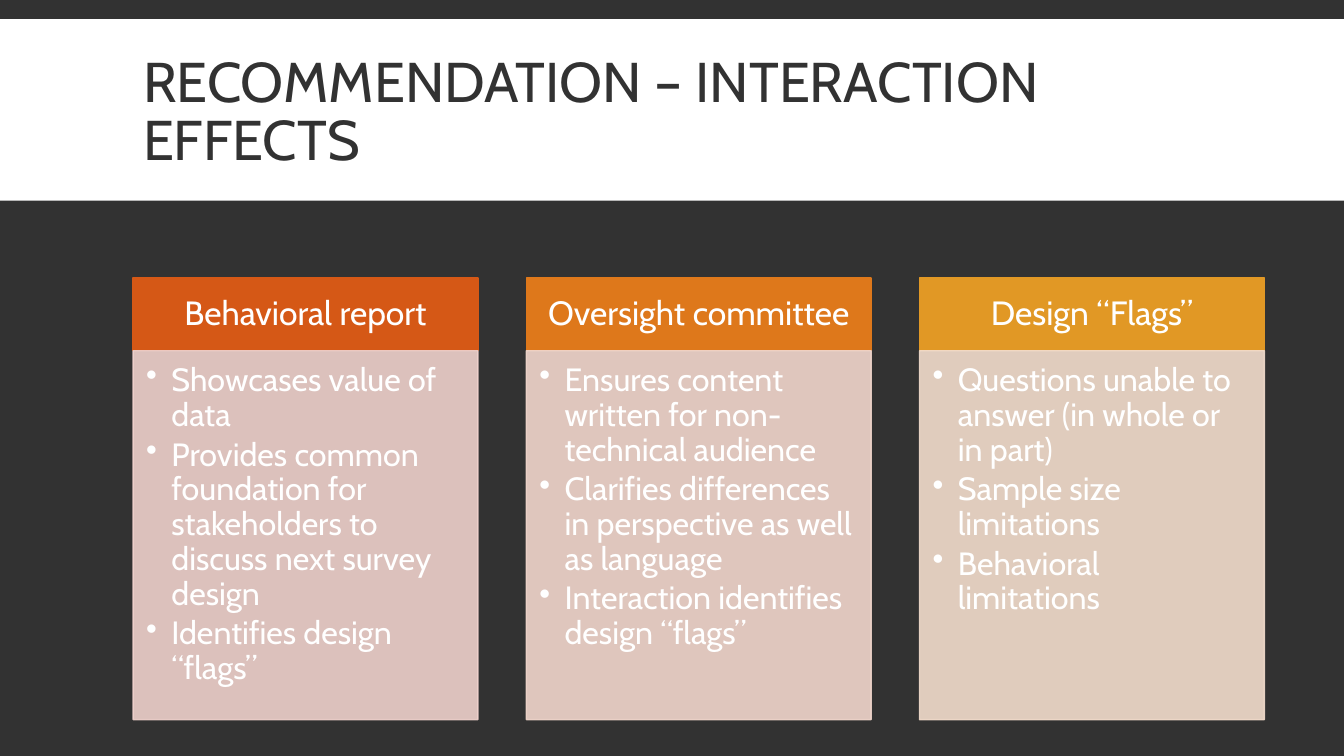
import pptx
import pptx.dml.color
import pptx.enum.shapes
import pptx.enum.text
import pptx.oxml
import pptx.oxml.ns
import pptx.util
from lxml import etree

Inches = pptx.util.Inches
Pt = pptx.util.Pt
ALIGN = pptx.enum.text.PP_ALIGN
ANCHOR = pptx.enum.text.MSO_ANCHOR
qn = pptx.oxml.ns.qn

DARK, WHITE = "323232", "FFFFFF"

# Heading, heading colour, body colour, bullets
COLUMNS = [
    ("Behavioral report", "D55816", "EFD1CC", [
        "Showcases value of data",
        "Provides common foundation for stakeholders to discuss next survey design",
        "Identifies design “flags”"]),
    ("Oversight committee", "DE781B", "F2D7CD", [
        "Ensures content written for non-technical audience",
        "Clarifies differences in perspective as well as language",
        "Interaction identifies design “flags”"]),
    ("Design “Flags”", "E19825", "F4DDCD", [
        "Questions unable to answer (in whole or in part)",
        "Sample size limitations",
        "Behavioral limitations"]),
]


def color(value):
    return pptx.dml.color.RGBColor.from_string(value)


def apply(target, values):
    for name, value in values.items():
        setattr(target, name, value)


class SlideBuilder:
    font = "Cabin"

    def __init__(self, page):
        self.page = page

    def background(self, fill):
        self.page.background.fill.solid()
        self.page.background.fill.fore_color.rgb = color(fill)

    def panel(self, left, top, width, height, fill, outlined=True, opacity=100):
        box = self.page.shapes.add_shape(
            pptx.enum.shapes.MSO_SHAPE.RECTANGLE,
            Inches(left), Inches(top), Inches(width), Inches(height))
        box.shadow.inherit = False
        paints = [box.fill]
        if outlined:
            box.line.width = Pt(1)
            paints.append(box.line.fill)
        else:
            box.line.fill.background()
        for paint in paints:
            paint.solid()
            paint.fore_color.rgb = color(fill)
        if opacity < 100:
            for tint in box.element.spPr.iter(qn("a:srgbClr")):
                etree.SubElement(tint, qn("a:alpha"), val=str(opacity * 1000))
        return box

    def text_box(self, left, top, width, height):
        return self.page.shapes.add_textbox(
            Inches(left), Inches(top), Inches(width), Inches(height))

    def add_text(self, box, lines, size, ink, insets, anchor, para_format, bullet=False):
        frame = box.text_frame
        sides = ("margin_left", "margin_top", "margin_right", "margin_bottom")
        apply(frame, {"word_wrap": True, "vertical_anchor": anchor})
        apply(frame, dict(zip(sides, map(Inches, insets))))
        for index, line in enumerate(lines):
            para = frame.add_paragraph() if index else frame.paragraphs[0]
            apply(para, para_format)
            if bullet:
                self.bullet(para)
            span = para.add_run()
            span.text = line
            apply(span.font, {"name": self.font, "size": Pt(size)})
            span.font.color.rgb = color(ink)

    def bullet(self, para):
        props = para._p.get_or_add_pPr()
        props.set("marL", str(Inches(0.25)))
        props.set("indent", str(Inches(-0.25)))
        etree.SubElement(props, qn("a:buChar"), char="•")


def main():
    deck = pptx.Presentation()
    apply(deck, {"slide_width": Inches(13.33), "slide_height": Inches(7.5)})
    slide = SlideBuilder(deck.slides.add_slide(deck.slide_layouts[6]))

    # Background, title band and title
    slide.background(DARK)
    slide.panel(0, 0.19, 13.33, 1.8, WHITE, outlined=False)
    slide.add_text(slide.text_box(1.32, 0.31, 11.22, 1.65),
                   ["RECOMMENDATION – INTERACTION EFFECTS"], 40, DARK,
                   (0.1, 0.05, 0.1, 0.05), ANCHOR.MIDDLE,
                   {"alignment": ALIGN.LEFT, "line_spacing": 0.85})

    # Three columns: heading above a bulleted body
    left, top, width, pitch = 1.32, 2.76, 3.42, 3.9
    head_height, body_height = 0.72, 3.66
    for index, (heading, head_fill, body_fill, points) in enumerate(COLUMNS):
        x = left + index * pitch
        head = slide.panel(x, top, width, head_height, head_fill)
        slide.add_text(head, [heading], 24, WHITE,
                       (0.19, 0.11, 0.19, 0.11), ANCHOR.MIDDLE,
                       {"alignment": ALIGN.CENTER, "line_spacing": 0.9})
        body = slide.panel(x, top + head_height, width, body_height, body_fill, opacity=90)
        slide.add_text(body, points, 23, WHITE,
                       (0.13, 0.13, 0.18, 0.2), ANCHOR.TOP,
                       {"alignment": ALIGN.LEFT, "line_spacing": 0.9, "space_after": Pt(3.5)},
                       bullet=True)

    deck.save("out.pptx")


if __name__ == "__main__":
    main()
